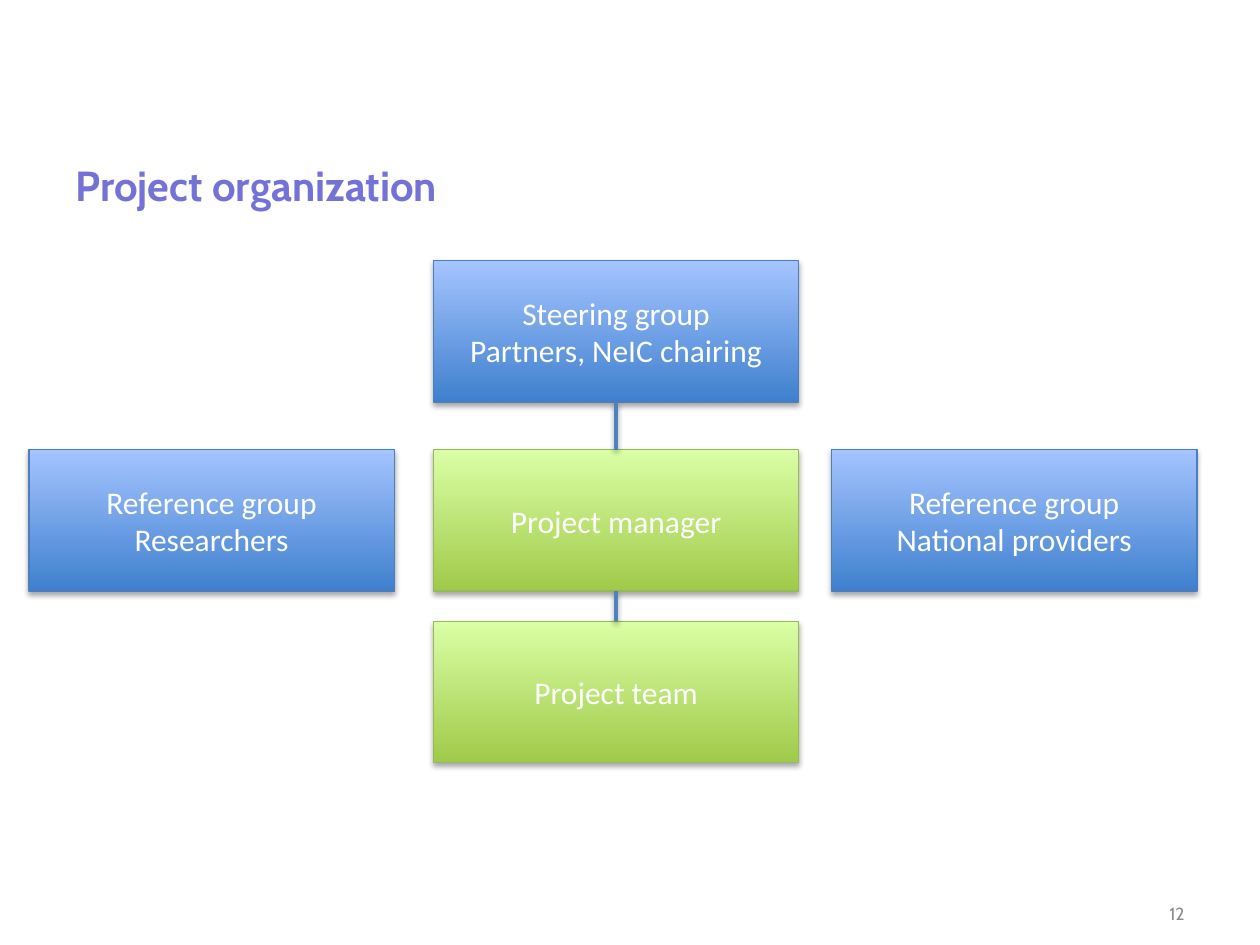
from dataclasses import dataclass

from pptx import Presentation
from pptx.dml.color import RGBColor
from pptx.enum.shapes import MSO_CONNECTOR, MSO_SHAPE
from pptx.enum.text import MSO_ANCHOR, PP_ALIGN
from pptx.oxml import parse_xml
from pptx.oxml.ns import nsdecls
from pptx.util import Inches, Pt


@dataclass(frozen=True)
class Theme:
    heading_font: str = "Cabin"
    body_font: str = "Calibri"
    title: str = "7373D7"
    number: str = "8C8C8C"
    box_text: str = "FFFFFF"
    link: str = "4F81BD"
    # Bottom colour, top colour, outline
    blue: tuple = ("3F80CE", "A4C4FF", "4B7EBC")
    green: tuple = ("A0CA4A", "DAFFA5", "98B955")
    title_size: int = 24
    box_size: int = 18
    number_size: int = 10


THEME = Theme()
BOX_WIDTH, BOX_HEIGHT = 2.9, 1.12
LEFT, CENTRE, RIGHT = 0.23, 3.44, 6.6
TOP, MIDDLE, BOTTOM = 2.07, 3.57, 4.93


def format_text(frame, font, size, color, align, bold=False):
    frame.vertical_anchor = MSO_ANCHOR.MIDDLE
    frame.word_wrap = True
    for para in frame.paragraphs:
        para.alignment = align
        for span in para.runs:
            span.font.name = font
            span.font.size = Pt(size)
            span.font.bold = bold
            span.font.color.rgb = RGBColor.from_string(color)


def add_shadow(shape, opacity, distance):
    """Give a shape or connector a soft shadow straight below it."""
    shape._element.spPr.append(parse_xml(
        f'<a:effectLst {nsdecls("a")}><a:outerShdw blurRad="{Pt(3.1)}" '
        f'dist="{Pt(distance)}" dir="5400000" rotWithShape="0">'
        f'<a:srgbClr val="000000"><a:alpha val="{opacity * 1000}"/></a:srgbClr>'
        '</a:outerShdw></a:effectLst>'))


def add_title(page, text, left, top, width, height):
    title = page.shapes.title
    title.left, title.top = Inches(left), Inches(top)
    title.width, title.height = Inches(width), Inches(height)
    title.text_frame.text = text
    format_text(title.text_frame, THEME.heading_font, THEME.title_size,
                THEME.title, PP_ALIGN.LEFT, bold=True)


def add_page_number(page, text, left, top, width, height):
    box = page.shapes.add_textbox(Inches(left), Inches(top), Inches(width), Inches(height))
    box.text_frame.text = text
    format_text(box.text_frame, THEME.heading_font, THEME.number_size,
                THEME.number, PP_ALIGN.RIGHT)


def add_group_box(page, text, left, top, colors):
    box = page.shapes.add_shape(MSO_SHAPE.RECTANGLE, Inches(left), Inches(top),
                                Inches(BOX_WIDTH), Inches(BOX_HEIGHT))
    *gradient, outline = colors
    box.fill.gradient()
    box.fill.gradient_angle = 90
    for stop, color in zip(box.fill.gradient_stops, gradient):
        stop.color.rgb = RGBColor.from_string(color)
    box.line.color.rgb = RGBColor.from_string(outline)
    box.line.width = Pt(0.75)
    add_shadow(box, 35, 1.8)
    box.text_frame.text = text
    format_text(box.text_frame, THEME.body_font, THEME.box_size,
                THEME.box_text, PP_ALIGN.CENTER)
    return box


def link_boxes(page, upper, lower):
    link = page.shapes.add_connector(MSO_CONNECTOR.STRAIGHT, 0, 0, 0, 0)
    link.begin_connect(upper, 2)
    link.end_connect(lower, 0)
    link.line.color.rgb = RGBColor.from_string(THEME.link)
    link.line.width = Pt(2)
    add_shadow(link, 38, 1.6)


def add_organization(page):
    # Chain of command down the centre
    steering = add_group_box(page, "Steering group\nPartners, NeIC chairing",
                             CENTRE, TOP, THEME.blue)
    manager = add_group_box(page, "Project manager", CENTRE, MIDDLE, THEME.green)
    team = add_group_box(page, "Project team", CENTRE, BOTTOM, THEME.green)

    # Reference groups on either side
    add_group_box(page, "Reference group\nResearchers", LEFT, MIDDLE, THEME.blue)
    add_group_box(page, "Reference group\nNational providers", RIGHT, MIDDLE, THEME.blue)

    link_boxes(page, steering, manager)
    link_boxes(page, manager, team)


def main():
    deck = Presentation()
    deck.slide_width, deck.slide_height = Inches(10), Inches(7.5)
    page = deck.slides.add_slide(deck.slide_layouts[5])
    add_title(page, "Project organization", 0.5, 1.03, 9, 0.87)
    add_page_number(page, "12", 7.17, 7.15, 2.33, 0.2)
    add_organization(page)
    deck.save("out.pptx")


if __name__ == "__main__":
    main()
